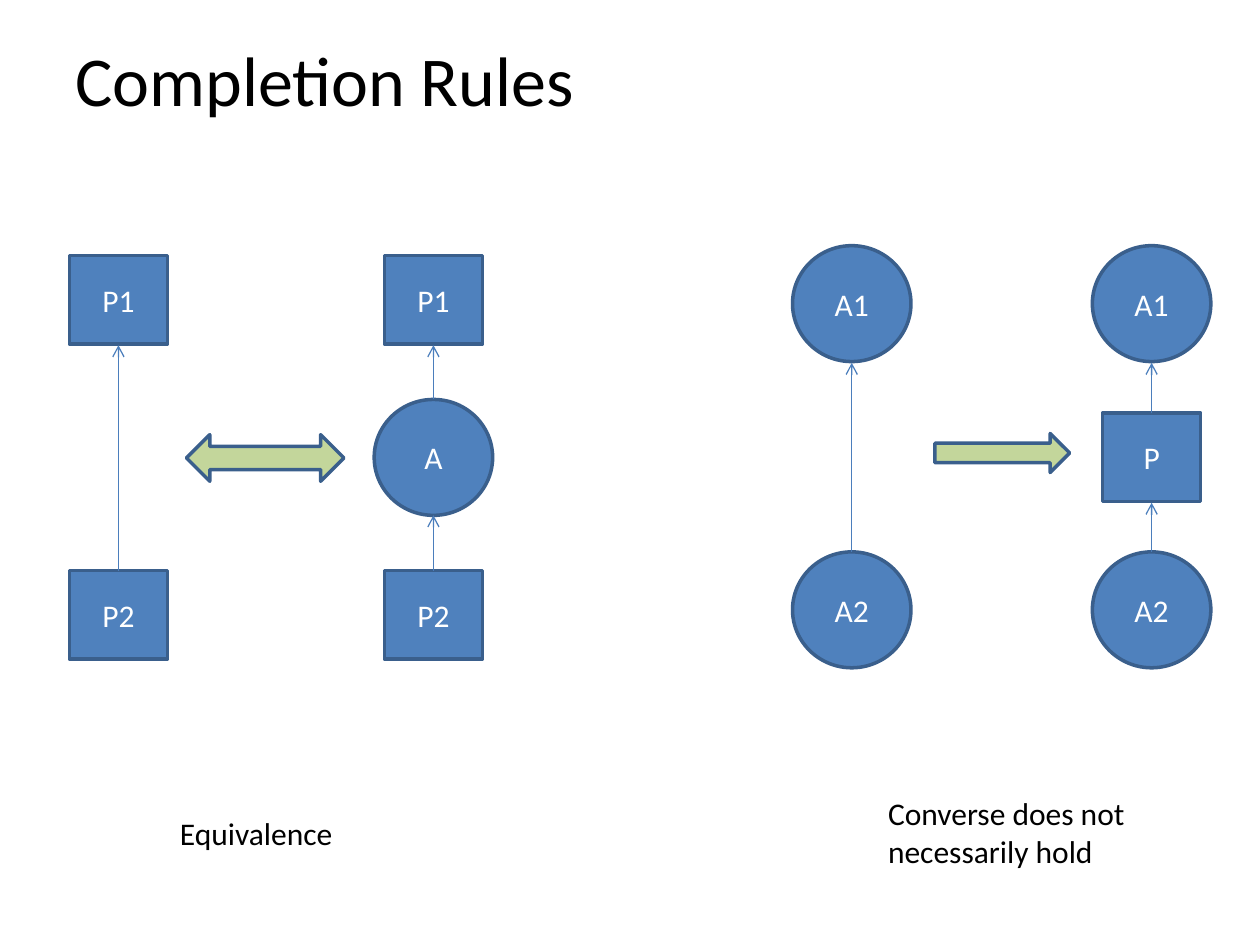
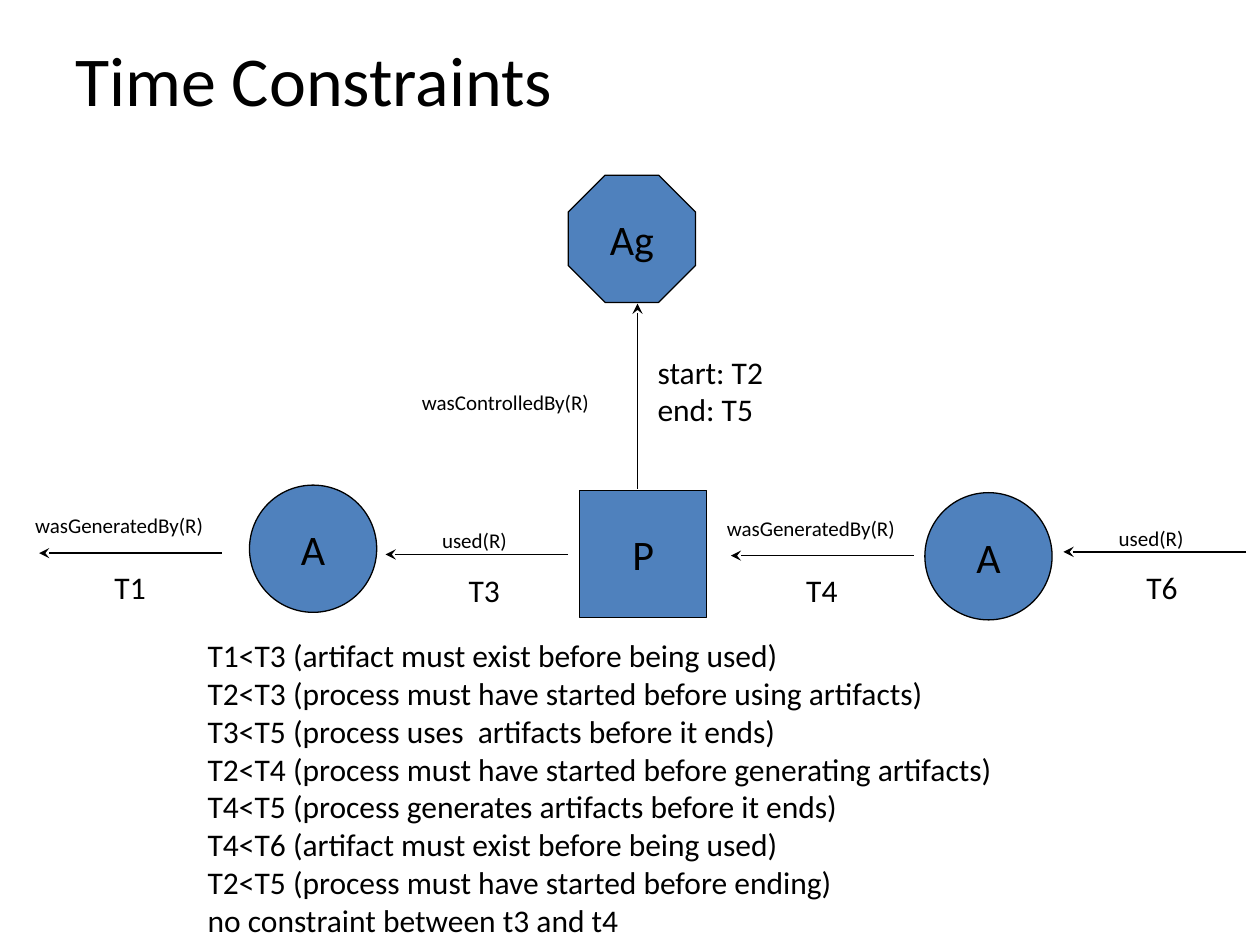
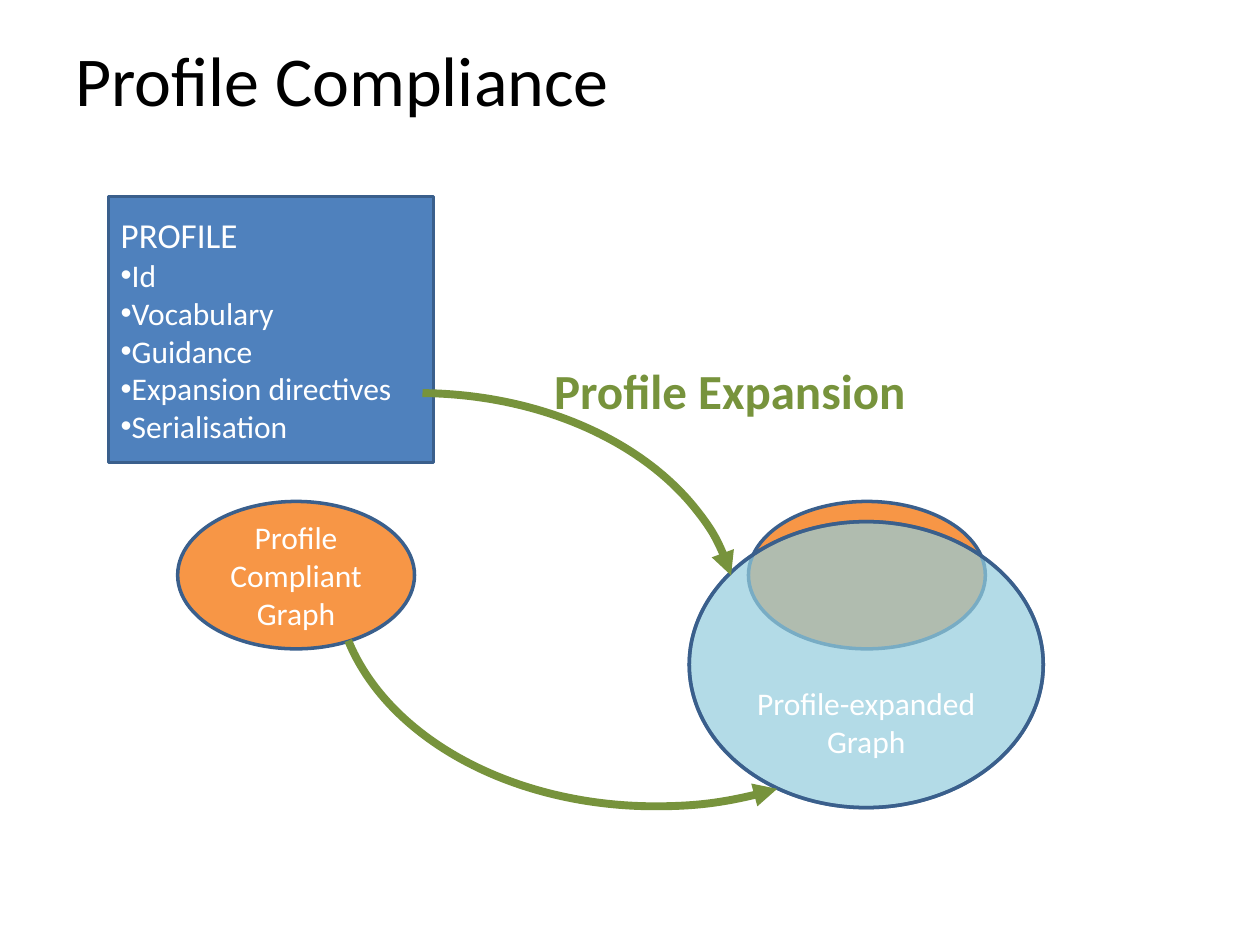
"""Build three slides on provenance rules: completion, time and profiles."""
import pptx
import pptx.util
import pptx.dml.color
import pptx.enum.shapes
import pptx.enum.text
import pptx.oxml.ns
import lxml.etree


class Theme:
    font = "Calibri"
    black, white = "000000", "FFFFFF"
    blue, edge, wire = "4F81BD", "3A5F8C", "4B7EBC"
    lime, green = "C3D69B", "77933C"
    orange, sky = "F79646", "93CDDD"
    title, head, node, lead, body, small = 40, 28, 24, 20, 18, 12
    thin, thick, bold = 0.75, 2, 4.5


PX = 9144
Kind = pptx.enum.shapes.MSO_SHAPE
Align = pptx.enum.text.PP_ALIGN
Anchor = pptx.enum.text.MSO_ANCHOR
Fit = pptx.enum.text.MSO_AUTO_SIZE
Pt = pptx.util.Pt
rgb = pptx.dml.color.RGBColor.from_string
qn = pptx.oxml.ns.qn


def put(slide, kind, box, text="", size=Theme.body, ink=Theme.white,
        fill=Theme.blue, line=Theme.edge, width=Theme.thick):
    """Add a shape, or a text box that does not wrap when kind is None."""
    place = [n * PX for n in box]
    if kind is None:
        shape = slide.shapes.add_textbox(*place)
        shape.text_frame.word_wrap = False
        shape.text_frame.auto_size = Fit.SHAPE_TO_FIT_TEXT
    else:
        shape = slide.shapes.add_shape(kind, *place)
        shape.shadow.inherit = False
        if fill:
            shape.fill.solid()
            shape.fill.fore_color.rgb = rgb(fill)
        else:
            shape.fill.background()
        shape.line.color.rgb = rgb(line)
        shape.line.width = Pt(width)
    if text:
        shape.text_frame.text = text
        for para in shape.text_frame.paragraphs:
            para.alignment = Align.CENTER if kind else Align.LEFT
            para.font.name = Theme.font
            para.font.size = Pt(size)
            para.font.color.rgb = rgb(ink)
    return shape


def link(slide, start, end, color, tip):
    """Draw a thin straight arrow from start to end."""
    wire = slide.shapes.add_connector(
        pptx.enum.shapes.MSO_CONNECTOR.STRAIGHT, *[n * PX for n in start + end])
    wire.line.color.rgb = rgb(color)
    wire.line.width = Pt(Theme.thin)
    props = wire._element.spPr
    lxml.etree.SubElement(props.find(qn("a:ln")), qn("a:tailEnd"), type=tip)
    lxml.etree.SubElement(props, qn("a:effectLst"))


deck = pptx.Presentation()
deck.slide_width, deck.slide_height = 1000 * PX, 750 * PX
slides = []
for name in ("Completion Rules", "Time Constraints", "Profile Compliance"):
    slide = deck.slides.add_slide(deck.slide_layouts[6])
    title = put(slide, None, (50, 0, 742, 125), name, Theme.title, Theme.black)
    title.text_frame.word_wrap = True
    title.text_frame.auto_size = Fit.NONE
    title.text_frame.vertical_anchor = Anchor.MIDDLE
    slides.append(slide)
rules, times, profile = slides

for x in (55, 305):
    for text, y in (("P1", 203), ("P2", 453)):
        put(rules, Kind.RECTANGLE, (x, y, 78, 70), text)
for x in (629, 867):
    for text, y in (("A1", 195), ("A2", 438)):
        put(rules, Kind.OVAL, (x, y, 94, 92), text)
put(rules, Kind.OVAL, (297, 317, 94, 92), "A")
put(rules, Kind.RECTANGLE, (875, 328, 78, 70), "P")
for x, low, high in ((94, 453, 274), (344, 317, 274), (344, 453, 409),
                     (676, 438, 288), (914, 328, 288), (914, 438, 399)):
    link(rules, (x, low), (x, high), Theme.wire, "arrow")
put(rules, Kind.LEFT_RIGHT_ARROW, (148, 345, 125, 37), fill=Theme.lime)
put(rules, Kind.RIGHT_ARROW, (742, 344, 107, 31), fill=Theme.lime)
put(rules, None, (133, 641, 143, 40), "Equivalence", ink=Theme.black)
put(rules, None, (695, 625, 210, 71), "Converse does not\nnecessarily hold",
    ink=Theme.black)

for kind, x, y, text in ((Kind.OVAL, 198, 385, "A"),
                         (Kind.RECTANGLE, 460, 389, "P"),
                         (Kind.OVAL, 734, 391, "A"),
                         (Kind.OCTAGON, 451, 139, "Ag")):
    node = put(times, kind, (x, y, 101, 101), text, Theme.node, Theme.black,
               line=Theme.black, width=Theme.thin)
    node.text_frame.word_wrap = False
    if kind == Kind.OCTAGON:
        node.adjustments[0] = 0.29
for x, y in ((31, 439), (306, 440), (580, 441), (844, 438)):
    link(times, (x + 145, y), (x, y), Theme.black, "stealth")
link(times, (506, 388), (506, 241), Theme.black, "stealth")
for x, y, wide, text in ((18, 402, 171, "wasGeneratedBy(R)"),
                         (341, 414, 79, "used(R)"),
                         (567, 404, 171, "wasGeneratedBy(R)"),
                         (878, 412, 79, "used(R)"),
                         (325, 304, 168, "wasControlledBy(R)")):
    put(times, None, (x, y, wide, 30), text, Theme.small, Theme.black)
for x, y, text in ((81, 446, "T1"), (362, 448, "T3"),
                   (630, 448, "T4"), (900, 446, "T6")):
    put(times, None, (x, y, 49, 40), text, ink=Theme.black)
put(times, None, (512, 275, 112, 70), "start: T2\nend: T5", ink=Theme.black)
limits = (
    "T1<T3 (artifact must exist before being used)",
    "T2<T3 (process must have started before using artifacts)",
    "T3<T5 (process uses  artifacts before it ends)",
    "T2<T4 (process must have started before generating artifacts)",
    "T4<T5 (process generates artifacts before it ends)",
    "T4<T6 (artifact must exist before being used)",
    "T2<T5 (process must have started before ending)",
    "no constraint between t3 and t4",
)
put(times, None, (155, 500, 707, 250), "\n".join(limits), ink=Theme.black)

put(profile, Kind.OVAL, (594, 398, 188, 117), fill=Theme.orange)
card = put(profile, Kind.RECTANGLE, (86, 156, 258, 211))
items = ("PROFILE", "Id", "Vocabulary", "Guidance", "Expansion directives",
         "Serialisation")
card.text_frame.text = "\n".join(items)
for row, para in enumerate(card.text_frame.paragraphs):
    para.alignment = Align.LEFT
    if row:
        props = para._p.get_or_add_pPr()
        lxml.etree.SubElement(props, qn("a:buFont"), typeface="Arial")
        lxml.etree.SubElement(props, qn("a:buChar"), char="•")
    para.font.name = Theme.font
    para.font.size = Pt(Theme.body if row else Theme.lead)
    para.font.color.rgb = rgb(Theme.white)
put(profile, Kind.OVAL, (141, 398, 188, 117), "Profile\nCompliant\nGraph",
    fill=Theme.orange)
ring = (547, 414, 281, 227)
glass = put(profile, Kind.OVAL, ring, "Profile-expanded\nGraph", fill=Theme.sky)
glass.text_frame.margin_top = 96 * PX
for color in glass._element.spPr.iter(qn("a:srgbClr")):
    lxml.etree.SubElement(color, qn("a:alpha"), val="70000")
put(profile, Kind.OVAL, ring, fill=None)
for x, y, start, end, flip in ((78, 312, 162.63, 210.67, False),
                               (266, 273, 115.23, 179.83, True)):
    arc = put(profile, Kind.ARC, (x, y, 508, 367), fill=None,
              line=Theme.green, width=Theme.bold)
    arc.adjustments[0], arc.adjustments[1] = start, end
    props = arc._element.spPr
    lxml.etree.SubElement(props.find(qn("a:ln")), qn("a:tailEnd"), type="triangle")
    if flip:
        props.find(qn("a:xfrm")).set("flipV", "1")
label = put(profile, None, (430, 281, 302, 57), "Profile Expansion",
            Theme.head, Theme.green)
label.text_frame.paragraphs[0].font.bold = True

deck.save("out.pptx")
